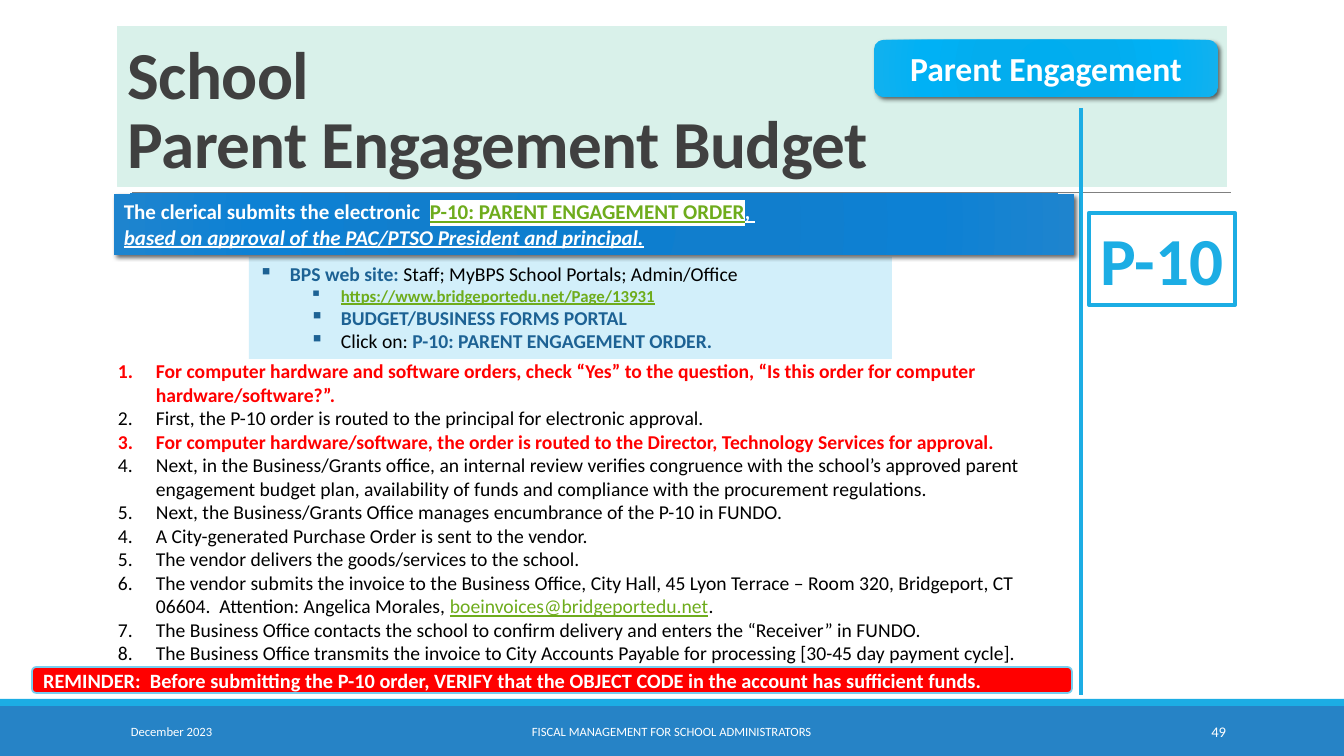
from dataclasses import dataclass

from lxml.etree import SubElement
from pptx import Presentation
from pptx.dml.color import RGBColor
from pptx.enum.shapes import MSO_CONNECTOR, MSO_SHAPE
from pptx.enum.text import MSO_ANCHOR, PP_ALIGN
from pptx.oxml.ns import qn
from pptx.util import Pt

PX = 914400 / 100.8
RECT, ROUND = MSO_SHAPE.RECTANGLE, MSO_SHAPE.ROUNDED_RECTANGLE
TOP, MIDDLE, BOTTOM = MSO_ANCHOR.TOP, MSO_ANCHOR.MIDDLE, MSO_ANCHOR.BOTTOM
LEFT, CENTER, RIGHT = PP_ALIGN.LEFT, PP_ALIGN.CENTER, PP_ALIGN.RIGHT


@dataclass(frozen=True)
class Theme:
    font: str = "Calibri"
    white: str = "FFFFFF"
    black: str = "000000"
    dark: str = "404040"
    gray: str = "808080"
    red: str = "FF0000"
    cyan: str = "1CADE4"
    blue: str = "2683C6"
    navy: str = "1D6294"
    green: str = "6EAC1C"
    mint: str = "D9F1EA"
    pale: str = "D2EFFA"
    edge: str = "77CEEF"
    deep: tuple = ((0, "0D7ECF"), (34, "117ECD"), (70, "0D81D4"), (100, "1E84CE"))
    sky: tuple = ((0, "00ADEF"), (34, "03ADEE"), (70, "00B1F5"), (100, "12B1EE"))
    head: float = 48
    tag: float = 24
    lead: float = 15
    alert: float = 14.5
    body: float = 14
    link: float = 12
    page: float = 10.5
    foot: float = 9


T = Theme()


@dataclass(frozen=True)
class Part:
    """A stretch of text in one style."""
    text: str
    size: float = T.body
    color: str = T.black
    bold: bool = False
    italic: bool = False
    under: bool = False
    mark: str = ""


def px(n):
    return round(n * PX)


def rgb(code):
    return RGBColor.from_string(code)


def node(parent, tag, **attrs):
    return SubElement(parent, qn(tag), {k: str(v) for k, v in attrs.items()})


def style(run, part):
    font = run.font
    font.name, font.size = T.font, Pt(part.size)
    font.bold, font.italic, font.underline = part.bold, part.italic, part.under
    font.color.rgb = rgb(part.color)
    if part.mark:
        props = run._r.get_or_add_rPr()
        mark = node(props, "a:highlight")
        node(mark, "a:srgbClr", val=part.mark)
        props.find(qn("a:solidFill")).addnext(mark)


def write(shape, lines, align=LEFT, anchor=TOP, wrap=True):
    """Fill a shape with paragraphs, each a list of parts."""
    frame = shape.text_frame
    frame.word_wrap, frame.vertical_anchor = wrap, anchor
    frame.text = "\n".join("".join(p.text for p in line[:1]) for line in lines)
    for para, line in zip(frame.paragraphs, lines):
        para.alignment = align
        for part in line[1:]:
            para.add_run().text = part.text
        for run, part in zip(para.runs, line):
            style(run, part)
    return frame.paragraphs


def box(slide, at, fill=None, kind=RECT, line=None, width=1):
    shape = slide.shapes.add_shape(kind, *map(px, at))
    shape.shadow.inherit = False
    if fill:
        shape.fill.solid()
        shape.fill.fore_color.rgb = rgb(fill)
    else:
        shape.fill.background()
    if line:
        shape.line.color.rgb, shape.line.width = rgb(line), Pt(width)
    else:
        shape.line.fill.background()
    return shape


def glow(slide, at, stops, kind=RECT):
    """Add a box with a radial gradient and a soft shadow."""
    shape = box(slide, at, kind=kind)
    props = shape._element.spPr
    grad = node(props, "a:gradFill", rotWithShape=1)
    props.replace(props.find(qn("a:noFill")), grad)
    steps = node(grad, "a:gsLst")
    for pos, color in stops:
        node(node(steps, "a:gs", pos=pos * 1000), "a:srgbClr", val=color)
    way = node(grad, "a:path", path="circle")
    node(way, "a:fillToRect", l=100000, t=100000, r=100000, b=100000)
    shade = node(props.find(qn("a:effectLst")), "a:outerShdw", blurRad=Pt(3.5),
                 dist=Pt(2), dir=45 * 60000, algn="tl", rotWithShape=0)
    node(node(shade, "a:srgbClr", val=T.black), "a:alpha", val=60000)
    return shape


def rule(slide, start, end, color, width):
    line = slide.shapes.add_connector(MSO_CONNECTOR.STRAIGHT, *map(px, start + end))
    line.line.color.rgb, line.line.width = rgb(color), Pt(width)
    node(line._element.spPr, "a:effectLst")


def label(slide, at, lines, **look):
    return write(slide.shapes.add_textbox(*map(px, at)), lines, **look)


def indent(para, left, hang):
    props = para._p.get_or_add_pPr()
    props.set("marL", str(px(left)))
    props.set("indent", str(-px(hang)))
    return props


def count(para, start):
    node(indent(para, 38, 38), "a:buAutoNum", type="arabicPeriod", startAt=start)


def dot(para, level):
    para.level = level
    props = indent(para, 31 + 51 * level, 31)
    node(node(props, "a:buClr"), "a:srgbClr", val=T.navy)
    node(props, "a:buChar", char="▪")


def title(slide):
    head = Part("School\vParent Engagement Budget", T.head, T.dark, True)
    shape = box(slide, (118, 27, 1109, 160), T.mint, line=T.mint, width=0.75)
    para, = write(shape, [[head]], anchor=BOTTOM)
    para.line_spacing = 0.85
    for run in para.runs:
        style(run, head)
        run._r.get_or_add_rPr().set("spc", "-50")


def footer(slide):
    for at, text, size, align in (
            ((121, 712, 272, 40), "December 2023", T.foot, LEFT),
            ((406, 712, 531, 40), "FISCAL MANAGEMENT FOR SCHOOL ADMINISTRATORS", T.foot, CENTER),
            ((1092, 712, 144, 40), "49", T.page, RIGHT)):
        label(slide, at, [[Part(text, size, T.white)]], align=align, anchor=MIDDLE)


def steps(slide):
    def alert(text):
        return [Part(text, color=T.red, bold=True)]

    first = [
        alert("For computer hardware and software orders, check “Yes” to the question, “Is this order for computer hardware/software?”."),
        [Part("First, the P-10 order is routed to the principal for electronic approval.")],
        alert("For computer hardware/software, the order is routed to the Director, Technology Services for approval."),
        [Part("Next, in the Business/Grants office, an internal review verifies congruence with the school’s approved parent engagement budget plan, availability of funds and compliance with the procurement regulations.")],
        [Part("Next, the Business/Grants Office manages encumbrance of the P-10 in FUNDO.")],
    ]
    then = [
        [Part("A City-generated Purchase Order is sent to the vendor.")],
        [Part("The vendor delivers the goods/services to the school.")],
        [Part("The vendor submits the invoice to the Business Office, City Hall, 45 Lyon Terrace – Room 320, Bridgeport, CT 06604.  Attention: Angelica Morales, "),
         Part("boeinvoices@bridgeportedu.net", color=T.green, under=True), Part(".")],
        [Part("The Business Office contacts the school to confirm delivery and enters the “Receiver” in FUNDO.")],
        [Part("The Business Office transmits the invoice to City Accounts Payable for processing [30-45 day payment cycle].")],
    ]
    paras = label(slide, (108, 354, 956, 319), first + then)
    for i, para in enumerate(paras):
        count(para, 1 if i < len(first) else 4)


def portal(slide):
    paras = write(box(slide, (249, 257, 643, 102), T.pale), [
        [Part("BPS web site: ", color=T.navy, bold=True),
         Part("Staff; MyBPS School Portals; Admin/Office")],
        [Part("https://www.bridgeportedu.net/Page/13931", T.link, T.green, True, under=True)],
        [Part("BUDGET/BUSINESS FORMS PORTAL", color=T.navy, bold=True)],
        [Part("Click on: "),
         Part("P-10: PARENT ENGAGEMENT ORDER.", color=T.navy, bold=True)],
    ])
    for i, para in enumerate(paras):
        dot(para, min(i, 1))


def banner(slide):
    write(glow(slide, (114, 194, 960, 61), T.deep), [
        [Part("The clerical submits the electronic  ", T.lead, T.white, True),
         Part("P-10: PARENT ENGAGEMENT ORDER", T.lead, T.green, True, under=True, mark=T.white),
         Part(", ", T.lead, T.white, True, under=True)],
        [Part("based on approval of the PAC/PTSO President and principal.",
              T.lead, T.white, True, True, True)],
    ])


def main():
    deck = Presentation()
    deck.slide_width, deck.slide_height = px(1344), px(756)
    slide = deck.slides.add_slide(deck.slide_layouts[6])
    box(slide, (0, 706, 1344, 50), T.blue)
    box(slide, (0, 699, 1344, 7), T.cyan)
    rule(slide, (132, 192), (1231, 192), T.gray, 0.5)
    title(slide)
    footer(slide)
    code = box(slide, (1089, 213, 146, 92), T.white, line=T.cyan, width=3)
    write(code, [[Part("P-10", T.head, T.cyan, True)]], CENTER, wrap=False)
    rule(slide, (1081, 108), (1081, 695), T.cyan, 2.25)
    note = box(slide, (32, 667, 1040, 26), T.red, ROUND, T.edge, 1.25)
    write(note, [[Part("REMINDER:  Before submitting the P-10 order, VERIFY that the OBJECT CODE in the account has sufficient funds.",
                       T.alert, T.white, True)]], anchor=MIDDLE)
    steps(slide)
    portal(slide)
    banner(slide)
    tag = glow(slide, (874, 40, 344, 57), T.sky, ROUND)
    write(tag, [[Part("Parent Engagement", T.tag, T.white, True)]], CENTER)
    deck.save("out.pptx")


if __name__ == "__main__":
    main()
